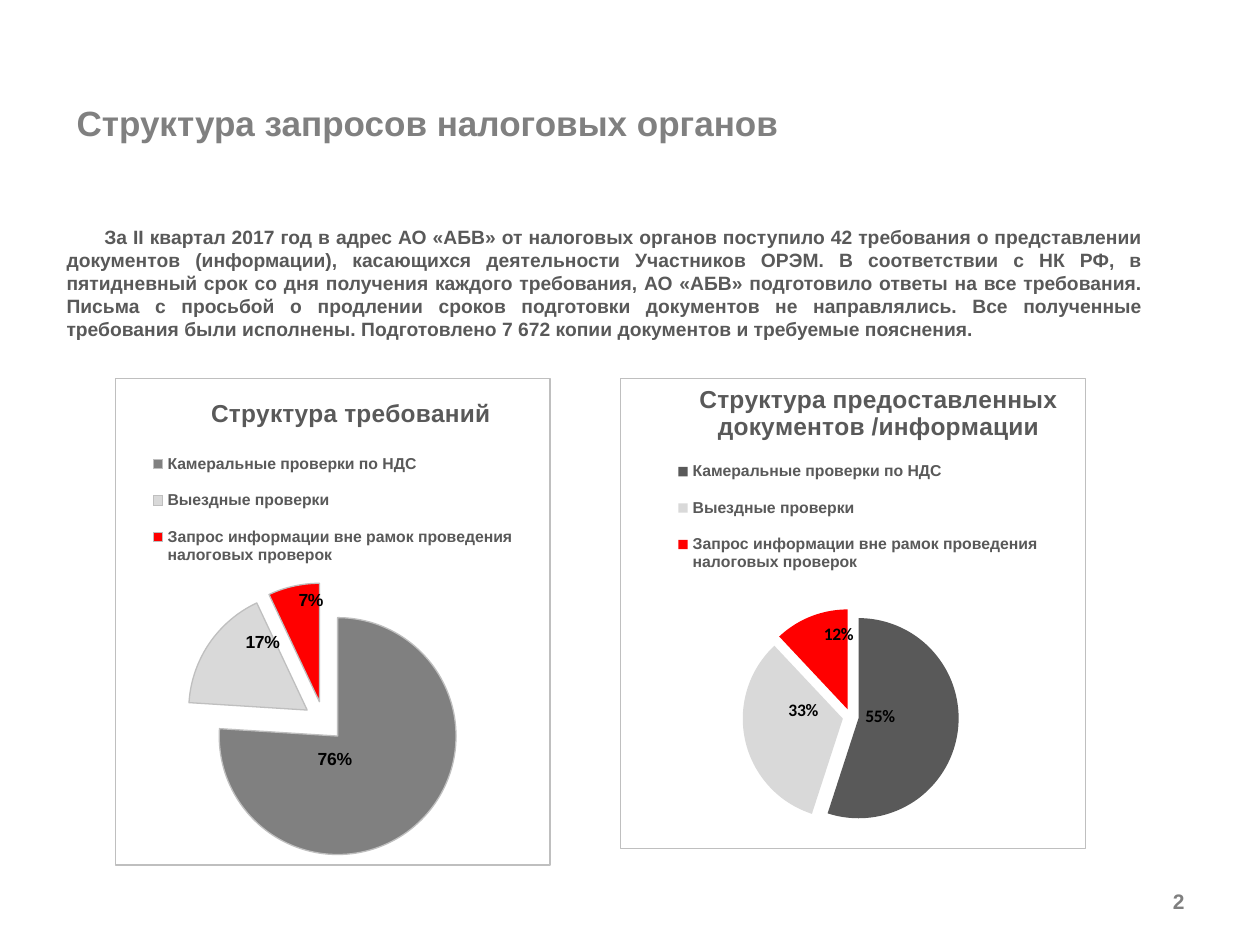
from lxml.etree import SubElement
from pptx import Presentation
from pptx.chart.data import CategoryChartData
from pptx.dml.color import RGBColor
from pptx.enum.chart import XL_CHART_TYPE, XL_LABEL_POSITION, XL_LEGEND_POSITION
from pptx.enum.text import MSO_ANCHOR, PP_ALIGN
from pptx.oxml import parse_xml
from pptx.oxml.ns import nsdecls, qn
from pptx.util import Inches, Pt

TITLE = "Структура запросов налоговых органов"
SUMMARY = (
    "За II квартал 2017 год в адрес АО «АБВ» от налоговых органов поступило 42 требования "
    "о представлении документов (информации), касающихся деятельности Участников ОРЭМ. "
    "В соответствии с НК РФ, в пятидневный срок со дня получения каждого требования, "
    "АО «АБВ» подготовило ответы на все требования. Письма с просьбой о продлении сроков "
    "подготовки документов не направлялись. Все полученные требования были исполнены. "
    "Подготовлено 7 672 копии документов и требуемые пояснения."
)
CATEGORIES = [
    "Камеральные проверки по НДС",
    "Выездные проверки",
    "Запрос информации вне рамок проведения налоговых проверок",
]
PIES = [
    {
        "title": "Структура требований",
        "box": (0.91, 3, 3.46, 3.87),
        "values": (76, 17, 7),
        "colors": ("808080", "D9D9D9", "FF0000"),
        "outline": "BFBFBF",
        "explosion": 17,
        "label_font": "Arial",
        "title_at": (0.21, 0.03),
        "legend_at": (0.06, 0.12, 0.88, 0.3),
        "plot_at": (0.02, 0.42, 0.92, 0.57),
        "label_shifts": ((-0.1, -0.04), (0.01, -0.07), (0.01, -0.09)),
    },
    {
        "title": "Структура предоставленных документов /информации",
        "box": (4.92, 3, 3.7, 3.74),
        "values": (55, 33, 12),
        "colors": ("595959", "D9D9D9", "FF0000"),
        "outline": None,
        "explosion": 8,
        "label_font": "Calibri",
        "title_at": (0.16, 0),
        "legend_at": (0.09, 0.14, 0.84, 0.31),
        "plot_at": (0.08, 0.49, 0.83, 0.46),
        "label_shifts": ((-0.06, -0.02), (0.02, -0.04), (0.02, -0.06)),
    },
]


def color(value):
    """Turn a hex string into a colour."""
    return RGBColor.from_string(value)


def style_font(font, size, value, name="Arial"):
    """Apply the bold style shared by all the text."""
    font.size, font.bold, font.name = Pt(size), True, name
    font.color.rgb = color(value)


def add_text(page, place, text, size, value, align=PP_ALIGN.LEFT, anchor=MSO_ANCHOR.TOP):
    """Add a one-paragraph text box and return its paragraph."""
    frame = page.shapes.add_textbox(*map(Inches, place)).text_frame
    frame.word_wrap = True
    frame.vertical_anchor = anchor
    para = frame.paragraphs[0]
    para.alignment = align
    span = para.add_run()
    span.text = text
    style_font(span.font, size, value)
    return para


def place_part(parent, index, sizes, modes=(), target=None):
    """Give a chart part a manual layout in fractions of the chart."""
    for old in parent.findall(qn("c:layout")):
        parent.remove(old)
    layout = parse_xml(f"<c:layout {nsdecls('c')}><c:manualLayout/></c:layout>")
    settings = [("layoutTarget", target)] if target else []
    settings += [(mode, "edge") for mode in modes]
    settings += zip("xywh", sizes)
    for name, value in settings:
        SubElement(layout[0], qn(f"c:{name}")).set("val", str(value))
    parent.insert(index, layout)


def add_pie(page, pie):
    """Add one exploded pie chart with title, legend and percent labels."""
    data = CategoryChartData()
    data.categories = CATEGORIES
    data.add_series("Series 1", pie["values"])
    chart = page.shapes.add_chart(XL_CHART_TYPE.PIE, *map(Inches, pie["box"]), data).chart
    style_font(chart.font, 10, "595959")
    edges = ("xMode", "yMode")

    chart.has_title = True
    span = chart.chart_title.text_frame.paragraphs[0].add_run()
    span.text = pie["title"]
    style_font(span.font, 14, "595959")
    place_part(chart.chart_title._element, 1, pie["title_at"], edges)

    chart.has_legend = True
    chart.legend.position = XL_LEGEND_POSITION.TOP
    chart.legend.include_in_layout = False
    style_font(chart.legend.font, 9, "595959")
    place_part(chart.legend._element, 1, pie["legend_at"], edges)

    plot = chart.plots[0]
    plot.vary_by_categories = True
    place_part(plot._element.getparent(), 0, pie["plot_at"], edges, "inner")
    series = plot.series[0]
    labels = series.data_labels
    labels.show_percentage, labels.show_value = True, False
    labels.number_format, labels.number_format_is_linked = "0%", False
    labels.position = XL_LABEL_POSITION.CENTER
    style_font(labels.font, 10, "000000", pie["label_font"])

    for index, (fill, shift) in enumerate(zip(pie["colors"], pie["label_shifts"])):
        point = series.points[index]
        point.format.fill.solid()
        point.format.fill.fore_color.rgb = color(fill)
        if pie["outline"]:
            point.format.line.color.rgb = color(pie["outline"])
            point.format.line.width = Pt(0.75)
        else:
            point.format.line.fill.background()
        label = point.data_label
        style_font(label.font, 10, "000000", pie["label_font"])
        label.position = XL_LABEL_POSITION.CENTER
        element = labels._element.findall(qn("c:dLbl"))[index]
        element.find(qn("c:showVal")).set("val", "0")
        element.find(qn("c:showPercent")).set("val", "1")
        place_part(element, 1, shift)

    explosion = parse_xml(f'<c:explosion {nsdecls("c")} val="{pie["explosion"]}"/>')
    series._element.find(qn("c:dPt")).addprevious(explosion)
    border = parse_xml(
        f'<c:spPr {nsdecls("c", "a")}><a:solidFill><a:srgbClr val="FFFFFF"/></a:solidFill>'
        '<a:ln w="9525"><a:solidFill><a:srgbClr val="BFBFBF"/></a:solidFill></a:ln></c:spPr>'
    )
    chart._chartSpace.find(qn("c:chart")).addnext(border)


def main():
    """Build and save the slide."""
    deck = Presentation()
    deck.slide_width, deck.slide_height = Inches(10), Inches(7.5)
    page = deck.slides.add_slide(deck.slide_layouts[6])
    summary = add_text(page, (0.43, 1.62, 8.74, 1.25), SUMMARY, 11, "595959",
                       PP_ALIGN.JUSTIFY, MSO_ANCHOR.MIDDLE)
    summary._p.get_or_add_pPr().set("indent", str(Inches(0.3)))
    for pie in PIES:
        add_pie(page, pie)
    add_text(page, (7.17, 6.95, 2.33, 0.4), "2", 12, "7F7F7F",
             PP_ALIGN.RIGHT, MSO_ANCHOR.MIDDLE)
    add_text(page, (0.51, 0.76, 8.74, 0.74), TITLE, 20, "808080")
    deck.save("out.pptx")


if __name__ == "__main__":
    main()
